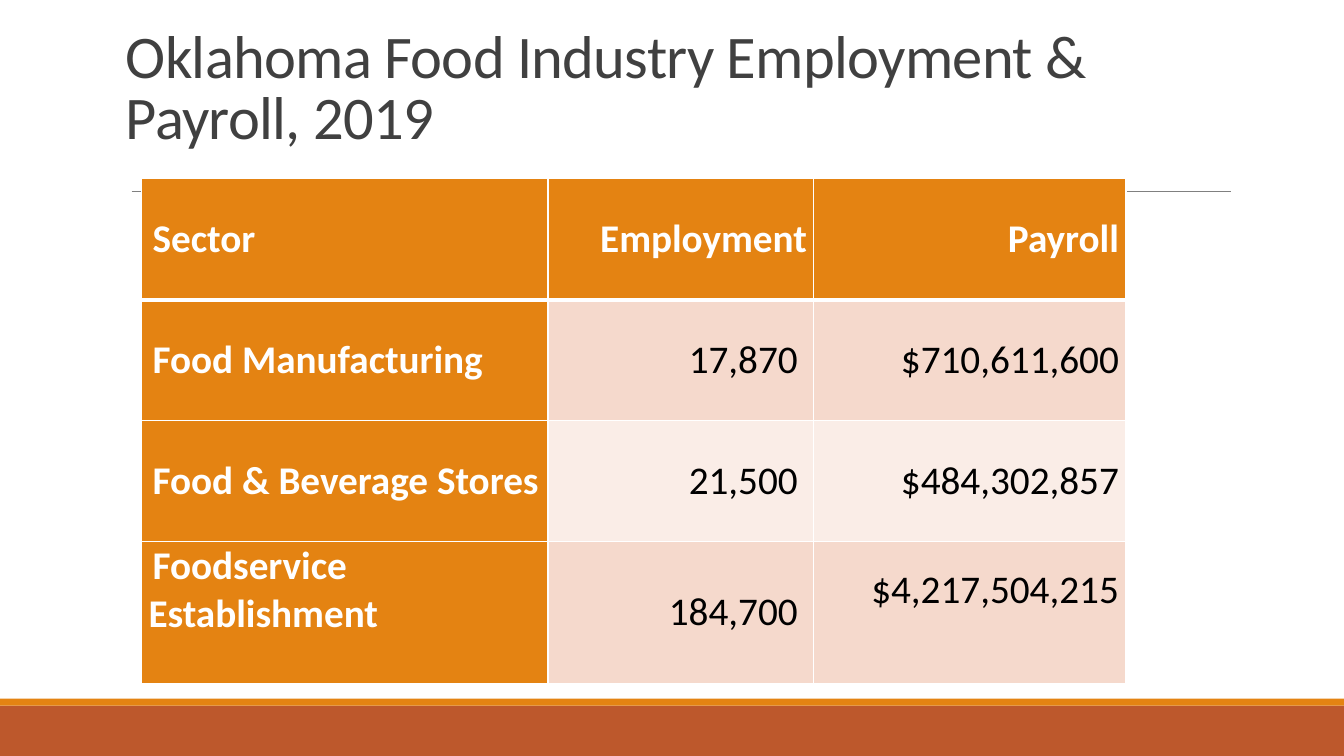
from collections import namedtuple
from dataclasses import dataclass

from lxml.etree import SubElement
from pptx import Presentation
from pptx.dml.color import RGBColor
from pptx.enum.shapes import MSO_CONNECTOR as Connector, MSO_SHAPE as Shape
from pptx.enum.text import MSO_ANCHOR as Anchor, PP_ALIGN as Align
from pptx.oxml import parse_xml
from pptx.oxml.ns import nsdecls, qn
from pptx.util import Emu, Inches, Pt

Box = namedtuple("Box", "left top width height")


@dataclass(frozen=True)
class Theme:
    font: str = "Calibri"
    title_size: float = 43.2
    table_size: float = 28
    title: str = "404040"
    rule: str = "808080"
    accent: str = "E48312"
    footer: str = "BD582C"
    label: str = "FFFFFF"
    value: str = "000000"
    border: str = "FFFFFF"
    bands: tuple = ("F5D9CC", "FAEDE7")


THEME = Theme()
SLIDE = Box(0, 0, Inches(13.33), Inches(7.5))
HEADINGS = ("Sector", "Employment", "Payroll")
SECTORS = (
    ("Food Manufacturing", "17,870", "$710,611,600"),
    ("Food & Beverage Stores", "21,500", "$484,302,857"),
    ("Foodservice Establishment", "184,700", "$4,217,504,215"),
)
COLUMN_SHARES = (0.413, 0.27, 0.317)
ROW_SHARES = (0.2415, 0.2415, 0.2415, 0.2755)
SIDE_INSET = Inches(0.07)
NUMBER_INSET = Inches(0.16)
LAST_ROW_LIFT = Inches(0.45)
LABEL_INDENT = Inches(0.04)


def share(box, left, top, width, height):
    return Box(
        Emu(round(box.left + box.width * left)),
        Emu(round(box.top + box.height * top)),
        Emu(round(box.width * width)),
        Emu(round(box.height * height)),
    )


def apply_format(target, values):
    for name, value in values.items():
        setattr(target, name, value)


def write(paragraph, words, size, color, bold=False):
    run = paragraph.add_run()
    run.text = words
    apply_format(run.font, {"name": THEME.font, "size": Pt(size), "bold": bold})
    run.font.color.rgb = RGBColor.from_string(color)
    return run


def add_footer(slide, box):
    stripe_share = 0.125
    bands = (
        (share(box, 0, stripe_share, 1, 1 - stripe_share), THEME.footer),
        (share(box, 0, 0, 1, stripe_share), THEME.accent),
    )
    for place, color in bands:
        band = slide.shapes.add_shape(Shape.RECTANGLE, *place)
        band.shadow.inherit = False
        band.fill.solid()
        band.fill.fore_color.rgb = RGBColor.from_string(color)
        band.line.fill.background()


def add_rule(slide, box):
    rule = slide.shapes.add_connector(
        Connector.STRAIGHT, box.left, box.top, box.left + box.width, box.top
    )
    rule.line.color.rgb = RGBColor.from_string(THEME.rule)
    rule.line.width = Pt(0.5)
    SubElement(rule._element.spPr, qn("a:effectLst"))


def add_title(slide, box):
    frame = slide.shapes.add_textbox(*box).text_frame
    apply_format(frame, {"word_wrap": True, "vertical_anchor": Anchor.BOTTOM})
    heading = frame.paragraphs[0]
    heading.line_spacing = 0.85
    run = write(
        heading,
        "Oklahoma Food Industry Employment & Payroll, 2019",
        THEME.title_size,
        THEME.title,
    )
    run.font._element.set("spc", "-50")


def set_borders(cell, widths):
    properties = cell._tc.get_or_add_tcPr()
    for position, (side, width) in enumerate(widths.items()):
        edge = parse_xml(
            f'<a:ln{side} {nsdecls("a")} w="{Pt(width)}"><a:solidFill>'
            f'<a:srgbClr val="{THEME.border}"/></a:solidFill></a:ln{side}>'
        )
        properties.insert(position, edge)


def fill_cell(cell, words, row, column):
    is_header, is_label = row == 0, column == 0
    emphasized = is_header or is_label
    is_lifted = row == len(SECTORS) and column != 1
    is_count = column == 1 and not is_header
    apply_format(cell, {
        "vertical_anchor": Anchor.MIDDLE,
        "margin_left": SIDE_INSET,
        "margin_right": NUMBER_INSET if is_count else SIDE_INSET,
        "margin_top": 0,
        "margin_bottom": LAST_ROW_LIFT if is_lifted else 0,
    })
    cell.fill.solid()
    band = THEME.bands[(row - 1) % 2]
    cell.fill.fore_color.rgb = RGBColor.from_string(THEME.accent if emphasized else band)
    set_borders(cell, {"L": 1, "R": 1, "T": 3 if row == 1 else 1, "B": 3 if is_header else 1})
    paragraph = cell.text_frame.paragraphs[0]
    paragraph.alignment = Align.LEFT if is_label else Align.RIGHT
    if is_label:
        paragraph._p.get_or_add_pPr().set("indent", str(LABEL_INDENT))
    color = THEME.label if emphasized else THEME.value
    write(paragraph, words, THEME.table_size, color, emphasized)


def add_sector_table(slide, box):
    rows = (HEADINGS, *SECTORS)
    table = slide.shapes.add_table(len(rows), len(HEADINGS), *box).table
    for column, portion in zip(table.columns, COLUMN_SHARES):
        column.width = round(box.width * portion)
    for row, portion in zip(table.rows, ROW_SHARES):
        row.height = round(box.height * portion)
    for row, entries in enumerate(rows):
        for column, words in enumerate(entries):
            fill_cell(table.cell(row, column), words, row, column)


def build_employment_slide(deck, box):
    slide = deck.slides.add_slide(deck.slide_layouts[6])
    add_footer(slide, share(box, 0, 0.924, 1, 0.076))
    add_rule(slide, share(box, 0.098, 0.253, 0.818, 0))
    add_sector_table(slide, share(box, 0.1053, 0.2365, 0.7325, 0.663))
    add_title(slide, share(box, 0.0863, 0.0413, 0.829, 0.1667))


def main():
    deck = Presentation()
    apply_format(deck, {"slide_width": SLIDE.width, "slide_height": SLIDE.height})
    build_employment_slide(deck, SLIDE)
    deck.save("out.pptx")


if __name__ == "__main__":
    main()
